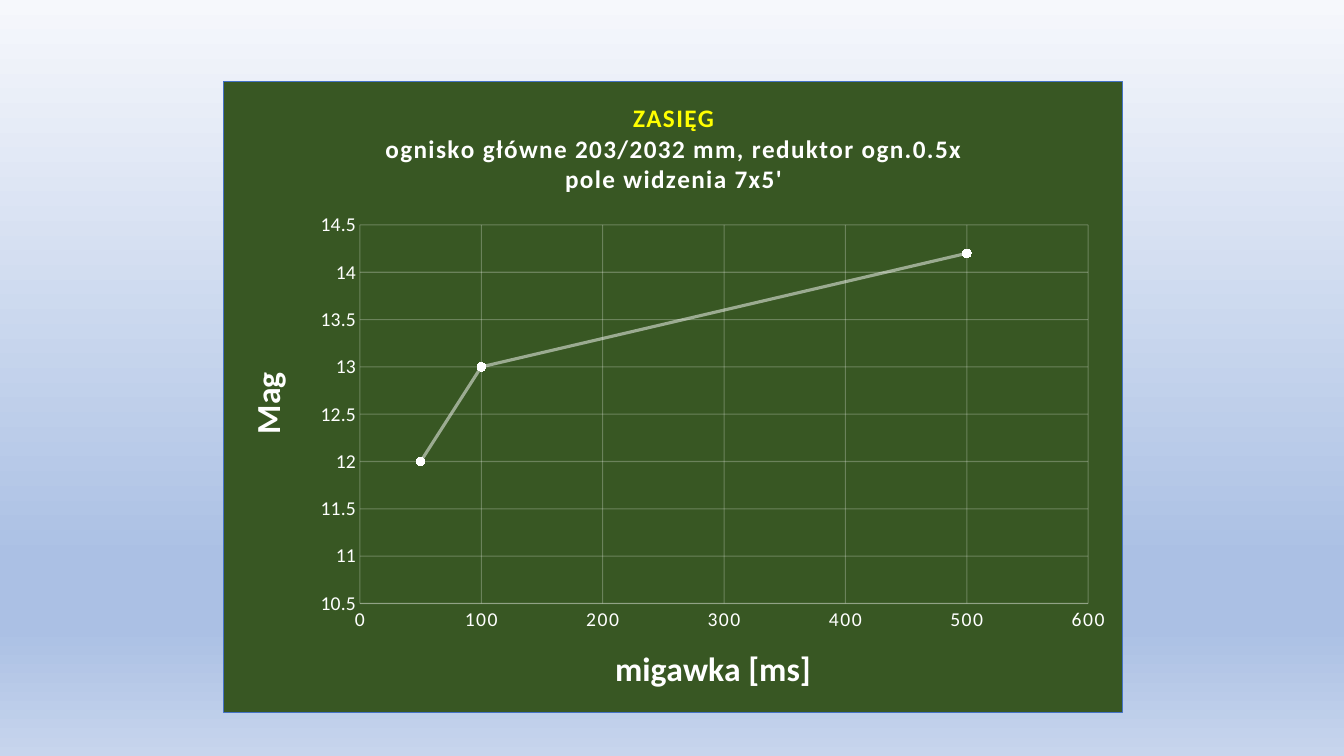
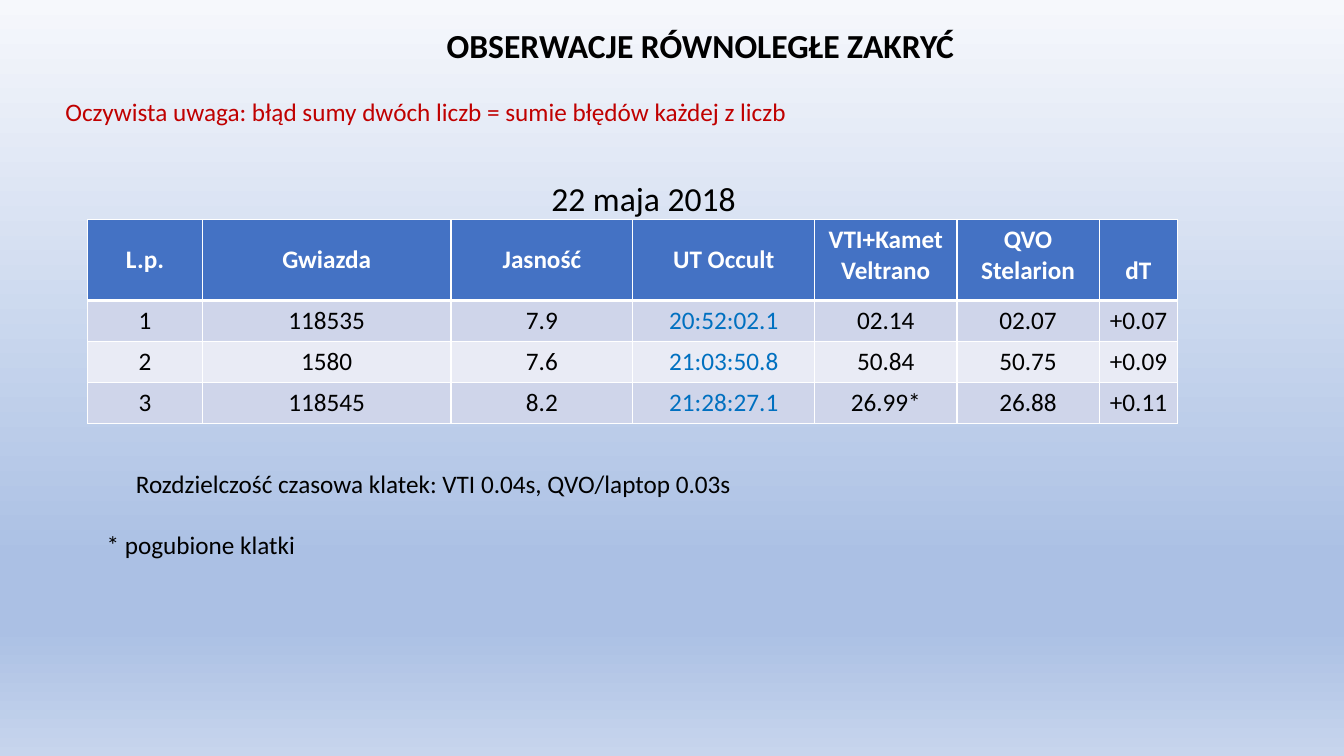
from lxml import etree
from pptx import Presentation
from pptx.chart.data import XyChartData
from pptx.dml.color import RGBColor
from pptx.enum import chart as ch, text as tx
from pptx.oxml import parse_xml
from pptx.oxml.ns import nsdecls, qn
from pptx.util import Pt

WHITE = RGBColor(0xFF, 0xFF, 0xFF)
BLACK = RGBColor(0, 0, 0)
YELLOW = RGBColor(0xFF, 0xFF, 0)
RED = RGBColor(0xC0, 0, 0)
SKY = RGBColor(0, 0x70, 0xC0)
BLUE = RGBColor(0x44, 0x72, 0xC4)
GREEN = RGBColor(0x38, 0x57, 0x23)
BANDS = RGBColor(0xCF, 0xD5, 0xEA), RGBColor(0xE9, 0xEB, 0xF5)
FONT = "Calibri"
STOPS = [(0, "F6F8FC"), (74, "ABC0E4"), (83, "ABC0E4"), (100, "C7D5ED")]

RANGE = [(50, 12), (100, 13), (500, 14.2)]
HEADING = [("ZASIĘG", YELLOW),
           ("ognisko główne 203/2032 mm, reduktor ogn.0.5x", WHITE),
           ("pole widzenia 7x5'", WHITE)]
# title, minimum, maximum, step, title place (shares of the chart)
AXES = [("migawka [ms]", 0, 600, 100, (0.429, 0.886)),
        ("Mag", 10.5, 14.5, 0.5, (0.017, 0.452))]

TITLE = ("OBSERWACJE RÓWNOLEGŁE ZAKRYĆ", 311.8, 14.4, 381, 36, 24, BLACK)
# text, left, top, width, height, size, colour
NOTES = [
    ("Oczywista uwaga: błąd sumy dwóch liczb = sumie błędów każdej z liczb",
     39.6, 65.5, 536, 29, 18, RED),
    ("* pogubione klatki", 69.1, 374.4, 150, 29, 18, BLACK),
    ("Rozdzielczość czasowa klatek: VTI 0.04s, QVO/laptop 0.03s",
     90, 331.2, 446, 29, 18, BLACK),
    ("22 maja 2018", 386.8, 123.8, 147, 36, 24, BLACK),
]
HEADS = ["L.p.", "Gwiazda", "Jasność", "UT Occult", "VTI+Kamet\nVeltrano",
         "QVO\nStelarion", "dT"]
ROWS = [
    ["1", "118535", "7.9", "20:52:02.1", "02.14", "02.07", "+0.07"],
    ["2", "1580", "7.6", "21:03:50.8", "50.84", "50.75", "+0.09"],
    ["3", "118545", "8.2", "21:28:27.1", "26.99*", "26.88", "+0.11"],
]
WIDTHS = [82.1, 177.5, 129.9, 129.9, 101.6, 101.6, 56.2]
HIGHS = [58.1, 29.2, 29.2, 29.2]


def style(font, size, color, bold=False):
    font.name, font.size, font.bold = FONT, Pt(size), bold
    font.color.rgb = color


def write(para, words, size, color, bold=False):
    run = para.add_run()
    run.text = words
    style(run.font, size, color, bold)


def paint(master):
    """Give the master its vertical gradient."""
    fill = master.background.fill
    fill.gradient()
    fill.gradient_angle = 270
    stops = next(master.element.iter(qn("a:gsLst")))
    for stop in list(stops):
        stops.remove(stop)
    for pos, color in STOPS:
        stop = etree.SubElement(stops, qn("a:gs"), pos=str(pos * 1000))
        etree.SubElement(stop, qn("a:srgbClr"), val=color)


def place(parent, index, **shares):
    """Set a manual layout on a chart title or plot area."""
    old = parent.find(qn("c:layout"))
    if old is not None:
        parent.remove(old)
    inner = '<c:layoutTarget val="inner"/>' if "w" in shares else ""
    modes = "".join(f'<c:{k}Mode val="edge"/>' for k in "xy")
    vals = "".join(f'<c:{k} val="{v}"/>' for k, v in shares.items())
    parent.insert(index, parse_xml(
        f'<c:layout {nsdecls("c")}><c:manualLayout>{inner}{modes}{vals}'
        '</c:manualLayout></c:layout>'))


def space(node):
    """Spread the letters of every run below a chart node."""
    for tag in ("a:rPr", "a:defRPr"):
        for props in node.iter(qn(tag)):
            props.set("spc", "100")


def set_axis(axis, name, low, high, step, spot):
    axis.minimum_scale, axis.maximum_scale = low, high
    axis.major_unit = step
    axis.major_tick_mark = axis.minor_tick_mark = ch.XL_TICK_MARK.NONE
    axis.has_major_gridlines = True
    grid = axis.major_gridlines.format.line
    grid.width = Pt(0.75)
    grid.color.rgb = WHITE
    style(axis.tick_labels.font, 14, WHITE)
    axis.tick_labels.number_format = "General"
    axis.tick_labels.number_format_is_linked = False
    frame = axis.axis_title.text_frame
    write(frame.paragraphs[0], name, 24, WHITE, True)
    place(axis.axis_title._element, 1, x=spot[0], y=spot[1])


def add_plot(slide):
    data = XyChartData()
    line = data.add_series("Series 1")
    for x, y in RANGE:
        line.add_data_point(x, y)
    chart = slide.shapes.add_chart(
        ch.XL_CHART_TYPE.XY_SCATTER_LINES, Pt(159.1), Pt(57.6), Pt(643),
        Pt(451.4), data).chart
    style(chart.font, 10, BLACK)
    chart.has_legend = False
    root = chart.element
    root.find(qn("c:chart")).addnext(parse_xml(
        f'<c:spPr {nsdecls("c", "a")}><a:solidFill><a:srgbClr val="{GREEN}"/>'
        f'</a:solidFill><a:ln w="{Pt(0.75)}"><a:solidFill>'
        f'<a:srgbClr val="{BLUE}"/></a:solidFill></a:ln></c:spPr>'))

    chart.has_title = True
    title = chart.chart_title
    frame = title.text_frame
    for i, (words, color) in enumerate(HEADING):
        para = frame.add_paragraph() if i else frame.paragraphs[0]
        write(para, words, 18, color, True)
    space(title._element)
    place(title._element, 1, x=0.177, y=0.028)

    across, up = chart.category_axis, chart.value_axis
    for axis, facts in zip((across, up), AXES):
        set_axis(axis, *facts)
    space(across._element.find(qn("c:txPr")))
    across.format.line.width = Pt(1)
    across.format.line.color.rgb = WHITE
    up.format.line.fill.background()
    body = next(up.axis_title._element.iter(qn("a:bodyPr")))
    body.set("rot", "-5400000")
    body.set("vert", "horz")

    plot = chart.plots[0]
    plot.vary_by_categories = False
    curve = plot.series[0]
    curve.format.line.width = Pt(2.25)
    curve.format.line.color.rgb = WHITE
    mark = curve.marker
    mark.style, mark.size = ch.XL_MARKER_STYLE.CIRCLE, 6
    mark.format.fill.solid()
    mark.format.fill.fore_color.rgb = WHITE
    mark.format.line.fill.background()
    for part, share in (("c:majorGridlines", 25), ("c:valAx/c:spPr", 25),
                        ("c:ser/c:spPr", 50)):
        for color in root.xpath(f".//{part}//a:srgbClr"):
            etree.SubElement(color, qn("a:alpha"), val=str(share * 1000))
    place(next(root.iter(qn("c:plotArea"))), 0,
          x=0.152, y=0.228, w=0.81, h=0.6)


def fit(shape, words, left, top, width, height, size, color, bold=False):
    """Place a one-line text shape and fill it."""
    shape.left, shape.top = Pt(left), Pt(top)
    shape.width, shape.height = Pt(width), Pt(height)
    frame = shape.text_frame
    frame.word_wrap = False
    frame.auto_size = tx.MSO_AUTO_SIZE.NONE
    frame.vertical_anchor = tx.MSO_ANCHOR.TOP
    para = frame.paragraphs[0]
    para.alignment = tx.PP_ALIGN.LEFT
    write(para, words, size, color, bold)


def edge(cell, head):
    """Draw white cell borders, thicker below the header."""
    props = cell._tc.get_or_add_tcPr()
    for i, side in enumerate("LRTB"):
        width = Pt(3 if head and side == "B" else 1)
        props.insert(i, parse_xml(
            f'<a:ln{side} {nsdecls("a")} w="{width}"><a:solidFill>'
            f'<a:srgbClr val="{WHITE}"/></a:solidFill></a:ln{side}>'))


def add_grid(slide):
    table = slide.shapes.add_table(
        len(HIGHS), len(WIDTHS), Pt(62.6), Pt(156.6), Pt(sum(WIDTHS)),
        Pt(sum(HIGHS))).table
    for col, width in zip(table.columns, WIDTHS):
        col.width = Pt(width)
    for r, (row, high) in enumerate(zip([HEADS] + ROWS, HIGHS)):
        table.rows[r].height = Pt(high)
        head = r == 0
        for c, words in enumerate(row):
            cell = table.cell(r, c)
            cell.fill.solid()
            cell.fill.fore_color.rgb = BLUE if head else BANDS[(r - 1) % 2]
            edge(cell, head)
            if head and c < 4:
                cell.vertical_anchor = tx.MSO_ANCHOR.MIDDLE
            color = WHITE if head else SKY if c == 3 else BLACK
            frame = cell.text_frame
            for i, line in enumerate(words.split("\n")):
                para = frame.add_paragraph() if i else frame.paragraphs[0]
                para.alignment = tx.PP_ALIGN.CENTER
                if words == "dT":
                    para.line_spacing = 2.0
                write(para, line, 18, color, head)


def main():
    deck = Presentation()
    deck.slide_width, deck.slide_height = Pt(960), Pt(540)
    paint(deck.slide_master)
    add_plot(deck.slides.add_slide(deck.slide_layouts[6]))

    slide = deck.slides.add_slide(deck.slide_layouts[5])
    fit(slide.shapes.title, *TITLE, bold=True)
    add_grid(slide)
    for note in NOTES:
        fit(slide.shapes.add_textbox(0, 0, 0, 0), *note)
    deck.save("out.pptx")


if __name__ == "__main__":
    main()
